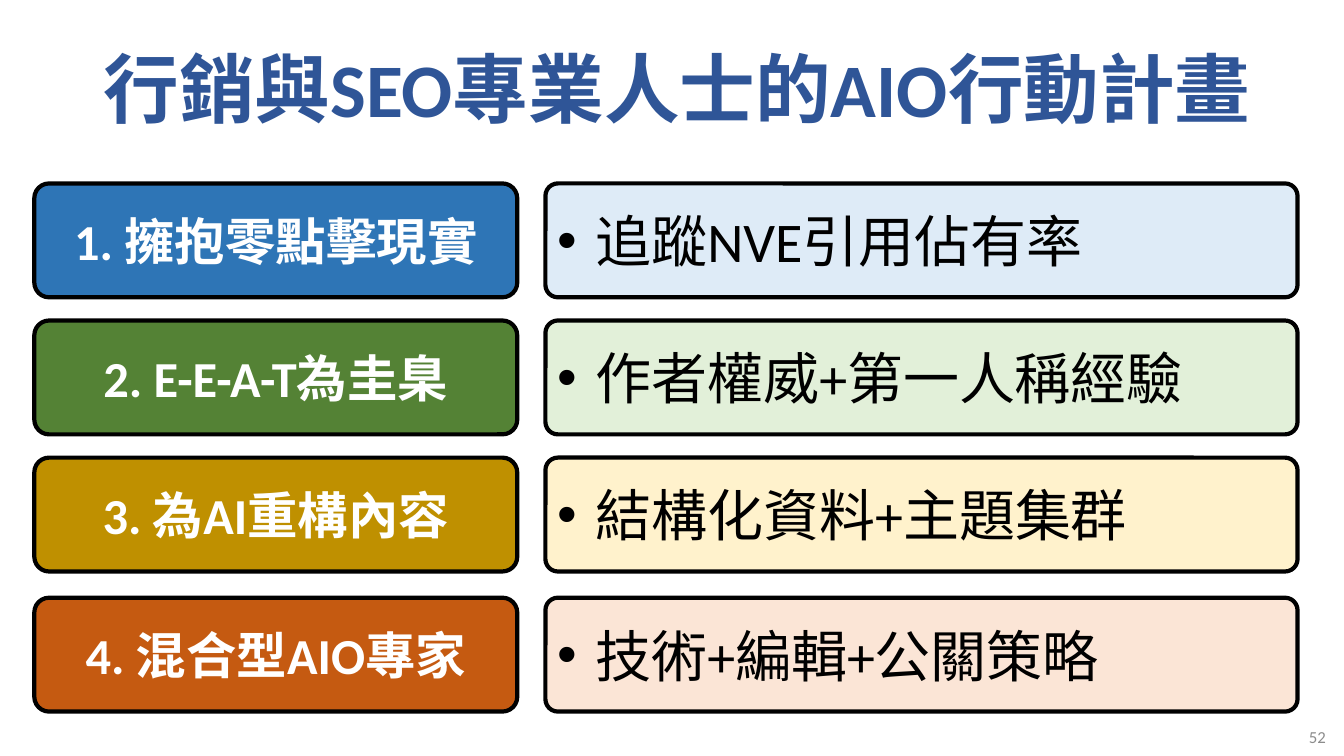
from dataclasses import dataclass

from lxml import etree
from pptx import Presentation
from pptx.dml.color import RGBColor
from pptx.enum.shapes import MSO_SHAPE
from pptx.enum.text import MSO_ANCHOR, MSO_AUTO_SIZE, PP_ALIGN
from pptx.oxml.ns import qn
from pptx.util import Inches, Pt

ROUNDED = MSO_SHAPE.ROUNDED_RECTANGLE
MIDDLE = MSO_ANCHOR.MIDDLE
NO_AUTOFIT = MSO_AUTO_SIZE.NONE
LEFT, CENTER, RIGHT = PP_ALIGN.LEFT, PP_ALIGN.CENTER, PP_ALIGN.RIGHT

HEADING = "行銷與SEO專業人士的AIO行動計畫"
PAGE_NUMBER = "52"
ACTIONS = [
    ("1. 擁抱零點擊現實", "追蹤NVE引用佔有率", "2E75B6", "DEEBF7"),
    ("2. E-E-A-T為圭臬", "作者權威+第一人稱經驗", "548235", "E2F0D9"),
    ("3. 為AI重構內容", "結構化資料+主題集群", "BF9000", "FFF2CC"),
    ("4. 混合型AIO專家", "技術+編輯+公關策略", "C55A11", "FBE5D6"),
]
ROW_TOPS = (1.82, 3.18, 4.54, 5.93)
ROW_HEIGHT = 1.13
STEP_LEFT, STEP_WIDTH = 0.34, 4.79
TACTIC_LEFT, TACTIC_WIDTH = 5.41, 7.46
BULLET_INDENT = 0.38


@dataclass(frozen=True)
class Theme:
    font: str = "Calibri"
    heading: str = "2F5597"
    number: str = "8C8C8C"
    outline: str = "000000"
    step_text: str = "FFFFFF"
    tactic_text: str = "000000"
    heading_size: int = 54
    step_size: int = 36
    tactic_size: int = 40
    number_size: int = 12
    outline_width: int = 3


THEME = Theme()


def write(frame, text, size, color, align, bold=False, side_inset=0.0):
    frame.word_wrap = True
    frame.auto_size = NO_AUTOFIT
    frame.vertical_anchor = MIDDLE
    frame.margin_left = frame.margin_right = Inches(side_inset)
    frame.margin_top = frame.margin_bottom = 0
    paragraph = frame.paragraphs[0]
    paragraph.text = text
    paragraph.alignment = align
    paragraph.font.name = THEME.font
    paragraph.font.size = Pt(size)
    paragraph.font.bold = bold
    paragraph.font.color.rgb = RGBColor.from_string(color)
    return paragraph


def add_card(slide, left, top, width, fill, corner):
    card = slide.shapes.add_shape(
        ROUNDED, Inches(left), Inches(top), Inches(width), Inches(ROW_HEIGHT))
    card.adjustments[0] = corner
    card.shadow.inherit = False
    card.fill.solid()
    card.fill.fore_color.rgb = RGBColor.from_string(fill)
    card.line.color.rgb = RGBColor.from_string(THEME.outline)
    card.line.width = Pt(THEME.outline_width)
    return card.text_frame


def add_bullet(paragraph):
    properties = paragraph._p.get_or_add_pPr()
    properties.set("marL", str(Inches(BULLET_INDENT)))
    properties.set("indent", str(-Inches(BULLET_INDENT)))
    bullet_font = etree.Element(qn("a:buFont"), typeface="Arial")
    bullet = etree.Element(qn("a:buChar"), char="•")
    defaults = properties.find(qn("a:defRPr"))
    defaults.addprevious(bullet_font)
    defaults.addprevious(bullet)


def add_heading(slide):
    title = slide.shapes.title
    title.left, title.top = Inches(0.58), Inches(0.15)
    title.width, title.height = Inches(12.27), Inches(1.44)
    heading = write(title.text_frame, HEADING, THEME.heading_size,
                    THEME.heading, CENTER, bold=True, side_inset=0.1)
    heading.line_spacing = 1.0


def add_page_number(slide):
    box = slide.shapes.add_textbox(
        Inches(12.2), Inches(7.18), Inches(1.05), Inches(0.26))
    write(box.text_frame, PAGE_NUMBER, THEME.number_size, THEME.number,
          RIGHT, side_inset=0.1)


def main():
    deck = Presentation()
    deck.slide_width, deck.slide_height = Inches(13.33), Inches(7.5)
    slide = deck.slides.add_slide(deck.slide_layouts[5])
    add_heading(slide)
    add_page_number(slide)
    for top, (step, tactic, dark, light) in zip(ROW_TOPS, ACTIONS):
        step_frame = add_card(slide, STEP_LEFT, top, STEP_WIDTH, dark, 0.13)
        write(step_frame, step, THEME.step_size, THEME.step_text, CENTER, bold=True)
        tactic_frame = add_card(slide, TACTIC_LEFT, top, TACTIC_WIDTH, light, 0.11)
        add_bullet(write(tactic_frame, tactic, THEME.tactic_size,
                         THEME.tactic_text, LEFT, side_inset=0.08))
    deck.save("out.pptx")


if __name__ == "__main__":
    main()
